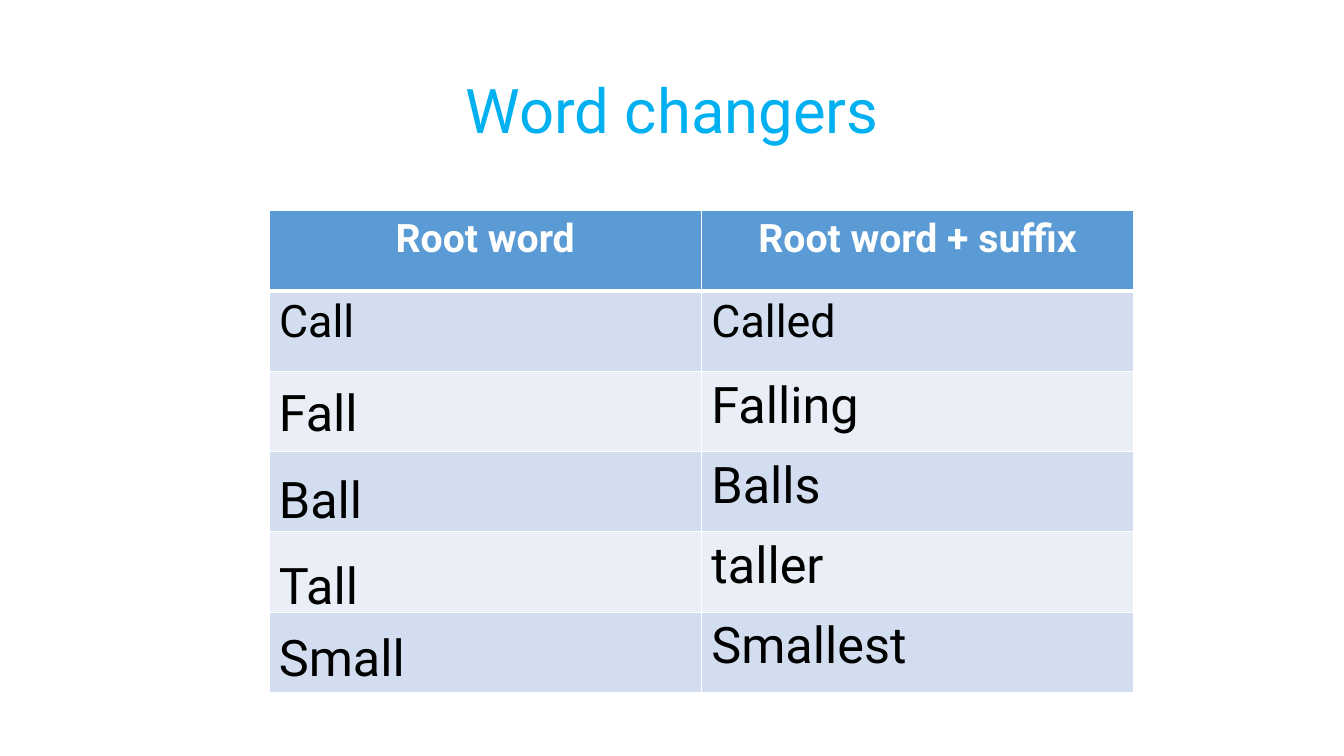
from dataclasses import dataclass

from lxml import etree
from pptx import Presentation
from pptx.dml.color import RGBColor
from pptx.enum.text import MSO_ANCHOR, MSO_AUTO_SIZE, PP_ALIGN
from pptx.util import Cm, Pt

CENTER, LEFT = PP_ALIGN.CENTER, PP_ALIGN.LEFT
MIDDLE = MSO_ANCHOR.MIDDLE
GROW = MSO_AUTO_SIZE.SHAPE_TO_FIT_TEXT
DRAWING = "{http://schemas.openxmlformats.org/drawingml/2006/main}"
TITLE_ONLY = 5


@dataclass(frozen=True)
class Theme:
    font: str = "Roboto"
    title: str = "00B0F0"
    header: str = "5B9BD5"
    bands: tuple = ("D2DEEF", "EAEFF7")
    light: str = "FFFFFF"
    dark: str = "000000"
    title_size: int = 44
    header_size: int = 28
    first_size: int = 32
    word_size: int = 36
    thin: int = 1
    thick: int = 3


THEME = Theme()
HEADINGS = ("Root word", "Root word + suffix")
SUFFIXED = ("Called", "Falling", "Balls", "taller", "Smallest")
ROOT_WORDS = (("Fall", 9.47, 3.84), ("Ball", 11.66, 5.66),
              ("Tall", 13.84, 6.68), ("Small", 15.65, 5.79))


def write(frame, text, size, color, align=LEFT, bold=False):
    para = frame.paragraphs[0]
    para.alignment = align
    span = para.add_run()
    span.text = text
    font_values = {"name": THEME.font, "size": Pt(size), "bold": bold}
    for name, value in font_values.items():
        setattr(span.font, name, value)
    span.font.color.rgb = RGBColor.from_string(color)


def place(shape, box):
    for name, value in zip(("left", "top", "width", "height"), box):
        setattr(shape, name, Cm(value))


def add_title(page, box, text):
    title = page.shapes.title
    place(title, box)
    frame = title.text_frame
    frame.vertical_anchor = MIDDLE
    write(frame, text, THEME.title_size, THEME.title, CENTER)
    frame.paragraphs[0].line_spacing = 0.9


def set_borders(cell, top, bottom):
    widths = {"lnL": THEME.thin, "lnR": THEME.thin, "lnT": top, "lnB": bottom}
    properties = cell._tc.get_or_add_tcPr()
    for index, (side, width) in enumerate(widths.items()):
        line = etree.Element(DRAWING + side, w=str(Pt(width)))
        fill = etree.SubElement(line, DRAWING + "solidFill")
        etree.SubElement(fill, DRAWING + "srgbClr", val=THEME.light)
        properties.insert(index, line)


def add_word_table(page, box):
    rows = [HEADINGS] + [("", word) for word in SUFFIXED]
    rows[1] = ("Call", SUFFIXED[0])
    lengths = [Cm(value) for value in box]
    table = page.shapes.add_table(len(rows), len(HEADINGS), *lengths).table
    for row_index, words in enumerate(rows):
        is_header = row_index == 0
        fill = THEME.header if is_header else THEME.bands[(row_index - 1) % 2]
        size = {0: THEME.header_size, 1: THEME.first_size}.get(row_index, THEME.word_size)
        color = THEME.light if is_header else THEME.dark
        align = CENTER if is_header else LEFT
        for column_index, word in enumerate(words):
            cell = table.cell(row_index, column_index)
            cell.fill.solid()
            cell.fill.fore_color.rgb = RGBColor.from_string(fill)
            set_borders(cell, THEME.thick if row_index == 1 else THEME.thin,
                        THEME.thick if is_header else THEME.thin)
            if word:
                write(cell.text_frame, word, size, color, align, is_header)


def add_root_words(page, left, height):
    for word, top, width in ROOT_WORDS:
        lengths = [Cm(value) for value in (left, top, width, height)]
        frame = page.shapes.add_textbox(*lengths).text_frame
        for name, value in {"word_wrap": True, "auto_size": GROW}.items():
            setattr(frame, name, value)
        write(frame, word, THEME.word_size, THEME.dark)


def build_word_slide(deck):
    page = deck.slides.add_slide(deck.slide_layouts[TITLE_ONLY])
    table_box = (6.78, 5.31, 21.79, 12.14)
    add_title(page, (2.34, 1.02, 29.21, 3.68), "Word changers")
    add_word_table(page, table_box)
    add_root_words(page, table_box[0], 1.8)


def main():
    deck = Presentation()
    deck.slide_width, deck.slide_height = Cm(33.87), Cm(19.05)
    build_word_slide(deck)
    deck.save("out.pptx")


if __name__ == "__main__":
    main()
